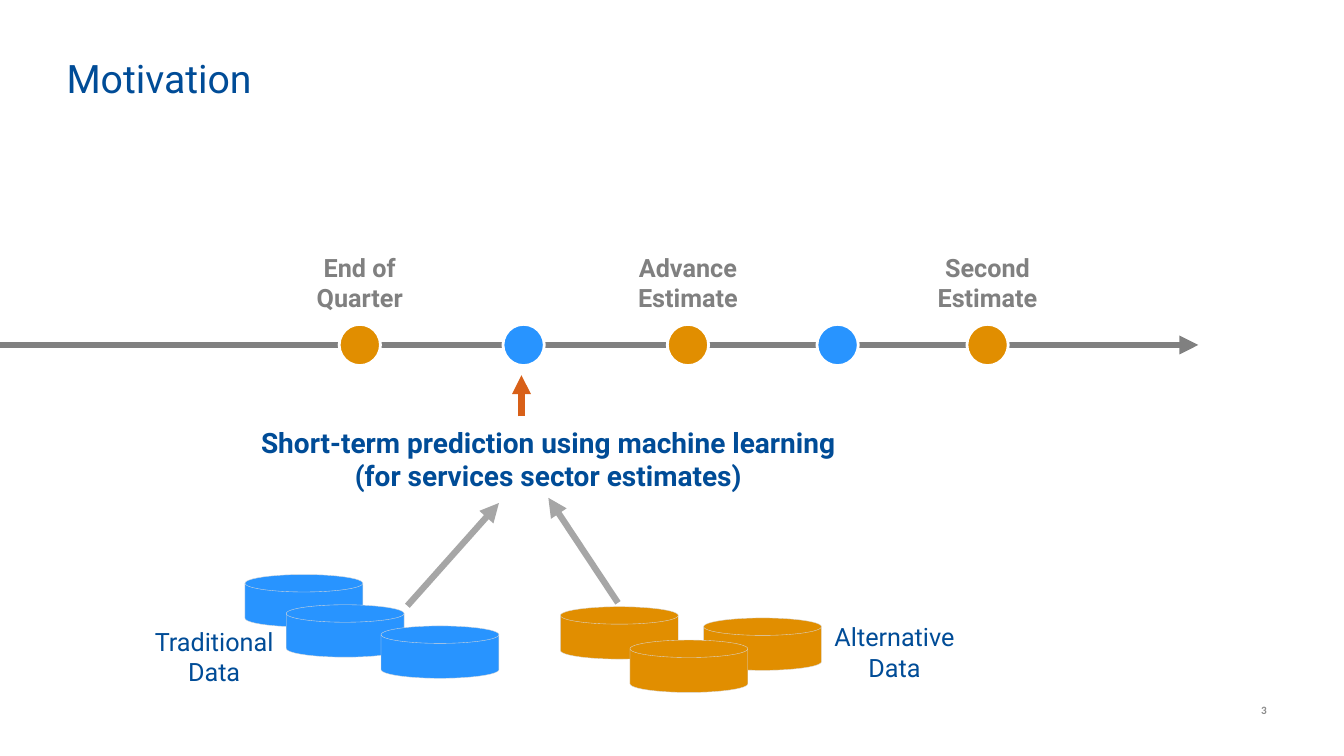
from dataclasses import dataclass
from lxml import etree
from pptx import Presentation
from pptx.dml.color import RGBColor
from pptx.enum.shapes import MSO_CONNECTOR, MSO_SHAPE
from pptx.enum.text import MSO_ANCHOR, MSO_AUTO_SIZE, PP_ALIGN
from pptx.oxml.ns import qn
from pptx.util import Pt

LINE = MSO_CONNECTOR.STRAIGHT
DOT = MSO_SHAPE.OVAL
DISK = MSO_SHAPE.FLOWCHART_MAGNETIC_DISK
LEFT, CENTER, RIGHT = PP_ALIGN.LEFT, PP_ALIGN.CENTER, PP_ALIGN.RIGHT
MIDDLE, TOP = MSO_ANCHOR.MIDDLE, MSO_ANCHOR.TOP
NO_FIT = MSO_AUTO_SIZE.NONE
BOTTOM_SIDE = 2


@dataclass
class Theme:
    font: str = "Roboto"
    page_font: str = "Calibri"
    navy: str = "004C97"
    blue: str = "2894FF"
    gold: str = "E18E00"
    rust: str = "D86018"
    gray: str = "808080"
    silver: str = "A6A6A6"
    mist: str = "D9D9D9"
    pale: str = "8C8C8C"
    white: str = "FFFFFF"
    title: int = 28
    claim: int = 20
    label: int = 18
    page: int = 8


T = Theme()

TITLE = "Motivation"
PAGE = "3"
CLAIM = "Short-term prediction using machine learning (for services sector estimates)"
EVENTS = [
    (257, T.gold, ["End of", "Quarter"]),
    (374, T.blue, []),
    (491.4, T.gold, ["Advance", "Estimate"]),
    (598.3, T.blue, []),
    (705.4, T.gold, ["Second", "Estimate"]),
]
SOURCES = [
    (["Traditional", "Data"], 78.5, 443.5, T.blue,
     [(175, 410.4), (204.5, 432), (272.2, 447.1)]),
    (["Alternative", "Data"], 564.5, 440.6, T.gold,
     [(502.6, 441.4), (400.3, 433.4), (450, 457.2)]),
]
AXIS = 246.4
DOT_SIZE = 29.5
DISK_SIZE = (84.2, 37.4)
LABEL_SIZE = (88, 51)
LABEL_TOP = 176.5
DATA_SIZE = (149, 51)

deck = Presentation()
deck.slide_width, deck.slide_height = Pt(960), Pt(540)
slide = deck.slides.add_slide(deck.slide_layouts[5])
shapes = slide.shapes


def rgb(code):
    return RGBColor.from_string(code)


def write(box, lines, size, color, bold=False, align=CENTER,
          anchor=TOP, font=T.font):
    frame = box.text_frame
    frame.text = "\n".join(lines)
    frame.word_wrap = True
    frame.auto_size = NO_FIT
    frame.vertical_anchor = anchor
    for para in frame.paragraphs:
        para.alignment = align
        para.font.name = font
        para.font.size = Pt(size)
        para.font.bold = bold
        para.font.color.rgb = rgb(color)


def add_text(left, top, size, *args, **style):
    box = shapes.add_textbox(Pt(left), Pt(top), *map(Pt, size))
    write(box, *args, **style)
    return box


def add_form(kind, left, top, size, fill, edge, weight):
    form = shapes.add_shape(kind, Pt(left), Pt(top), *map(Pt, size))
    form.shadow.inherit = False
    form.fill.solid()
    form.fill.fore_color.rgb = rgb(fill)
    form.line.color.rgb = rgb(edge)
    form.line.width = Pt(weight)


def add_arrow(start, end, color):
    arrow = shapes.add_connector(LINE, *map(Pt, start + end))
    arrow.line.color.rgb = rgb(color)
    arrow.line.width = Pt(4.5)
    tip = etree.SubElement(arrow.line._get_or_add_ln(), qn("a:tailEnd"))
    tip.set("type", "triangle")
    etree.SubElement(arrow._element.spPr, qn("a:effectLst"))
    return arrow


title = shapes.title
title.left, title.top, title.width, title.height = map(Pt, (40.3, 18, 728, 72))
write(title, [TITLE], T.title, T.navy, align=LEFT, anchor=MIDDLE)
title.text_frame.margin_bottom = 0

add_text(856, 499, (56, 16), [PAGE], T.page, T.pale, bold=True,
         align=RIGHT, anchor=MIDDLE, font=T.page_font)

add_arrow((0, AXIS), (856, AXIS), T.gray)
for mid, color, lines in EVENTS:
    add_form(DOT, mid - DOT_SIZE / 2, AXIS - DOT_SIZE / 2,
             (DOT_SIZE, DOT_SIZE), color, T.white, 2)
    if lines:
        add_text(mid - LABEL_SIZE[0] / 2, LABEL_TOP, LABEL_SIZE,
                 lines, T.label, T.gray, bold=True)

claim = add_text(175, 300.2, (433.4, 55.4), [CLAIM], T.claim, T.navy, bold=True)
add_arrow((372.5, 297.5), (372.5, 268), T.rust)

for lines, left, top, color, disks in SOURCES:
    for x, y in disks:
        add_form(DISK, x, y, DISK_SIZE, color, T.mist, 0.25)
    add_text(left, top, DATA_SIZE, lines, T.label, T.navy)

add_arrow((291, 432.7), (356.4, 359.3), T.silver)
feed = add_arrow((441.4, 430.6), (391.7, 355.6), T.silver)
feed.end_connect(claim, BOTTOM_SIDE)

deck.save("out.pptx")
